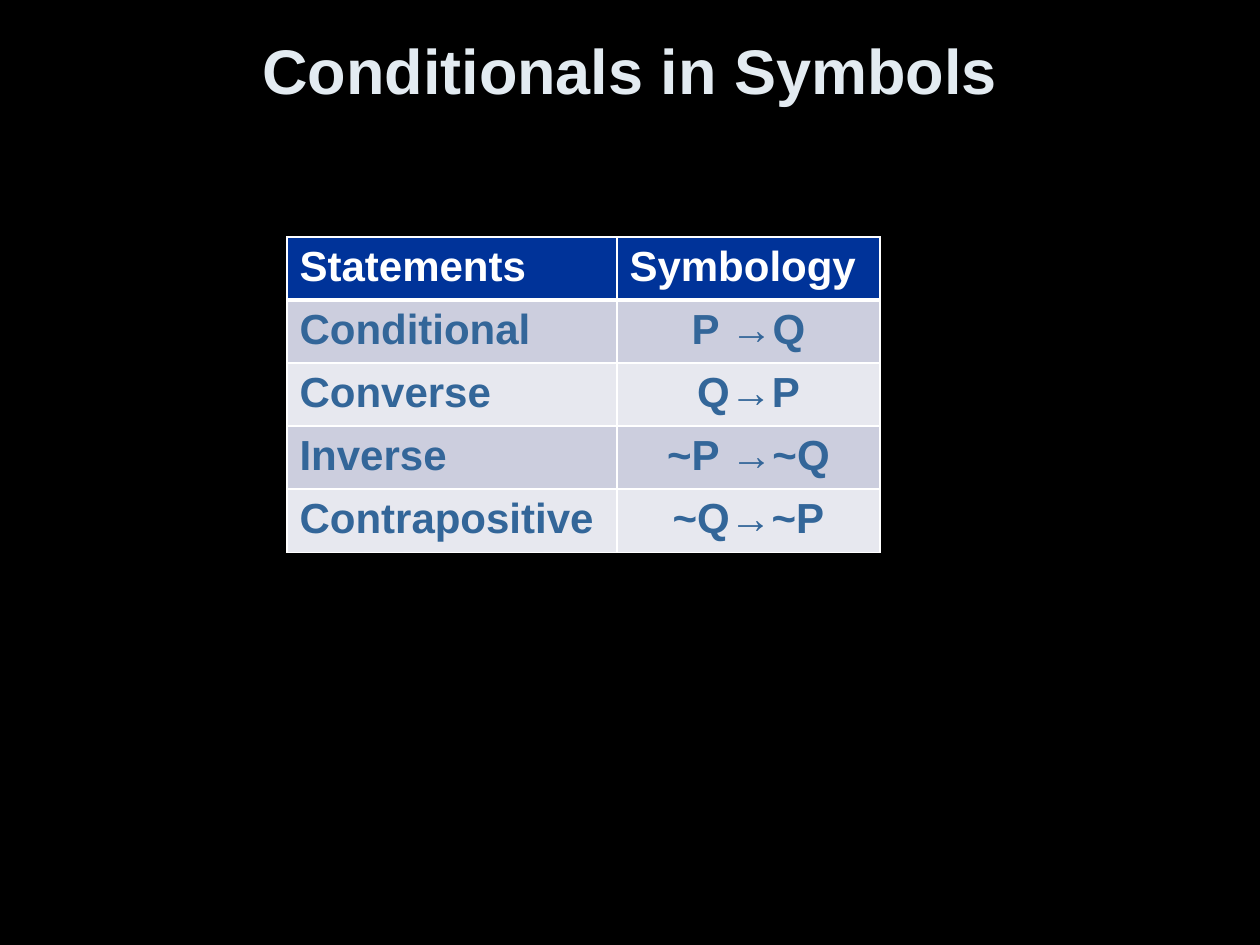
from lxml import etree
from pptx import Presentation
from pptx.dml.color import RGBColor
from pptx.enum.text import MSO_ANCHOR, PP_ALIGN
from pptx.oxml.ns import qn
from pptx.util import Pt

PX = 914400 // 126
CENTER, LEFT, MIDDLE = PP_ALIGN.CENTER, PP_ALIGN.LEFT, MSO_ANCHOR.MIDDLE
COLORS = {
    "background": "000000",
    "title": "E3EBF1",
    "header": "003399",
    "header_text": "FFFFFF",
    "body_text": "336699",
    "odd_row": "CCCEDE",
    "even_row": "E7E8EF",
    "border": "FFFFFF",
}


def write(para, text, size, color, align):
    para.text = text
    para.alignment = align
    font = para.runs[0].font
    font.name, font.size, font.bold = "Arial", Pt(size), True
    font.color.rgb = RGBColor.from_string(COLORS[color])


def add_border(cell, side, width):
    line = etree.SubElement(cell._tc.get_or_add_tcPr(), qn(f"a:ln{side}"), w=str(Pt(width)))
    fill = etree.SubElement(line, qn("a:solidFill"))
    etree.SubElement(fill, qn("a:srgbClr"), val=COLORS["border"])


deck = Presentation()
deck.slide_width, deck.slide_height = 1260 * PX, 945 * PX
page = deck.slides.add_slide(deck.slide_layouts[6])
page.background.fill.solid()
page.background.fill.fore_color.rgb = RGBColor.from_string(COLORS["background"])

# Title
title = page.shapes.add_textbox(63 * PX, 19 * PX, 1134 * PX, 101 * PX)
title.text_frame.word_wrap = True
title.text_frame.vertical_anchor = MIDDLE
write(title.text_frame.paragraphs[0], "Conditionals in Symbols", 36, "title", CENTER)

# Table of statements and their symbols
rows = [
    ("Statements", "Symbology"),
    ("Conditional", "P →Q"),
    ("Converse", "Q→P"),
    ("Inverse", "~P →~Q"),
    ("Contrapositive", "~Q→~P"),
]
column_widths = [330, 263]
row_height = 59
table = page.shapes.add_table(
    len(rows), len(column_widths), 287 * PX, 237 * PX,
    sum(column_widths) * PX, len(rows) * row_height * PX,
).table
for column, width in zip(table.columns, column_widths):
    column.width = width * PX

for r, texts in enumerate(rows):
    if r == 0:
        fill_color, text_color = "header", "header_text"
    else:
        fill_color, text_color = ("odd_row" if r % 2 else "even_row"), "body_text"
    for c, text in enumerate(texts):
        cell = table.cell(r, c)
        # Heavy rule between the header and the body
        for side, width in (("L", 1), ("R", 1), ("T", 3 if r == 1 else 1), ("B", 3 if r == 0 else 1)):
            add_border(cell, side, width)
        cell.fill.solid()
        cell.fill.fore_color.rgb = RGBColor.from_string(COLORS[fill_color])
        align = CENTER if r and c else LEFT
        write(cell.text_frame.paragraphs[0], text, 24, text_color, align)

deck.save("out.pptx")
